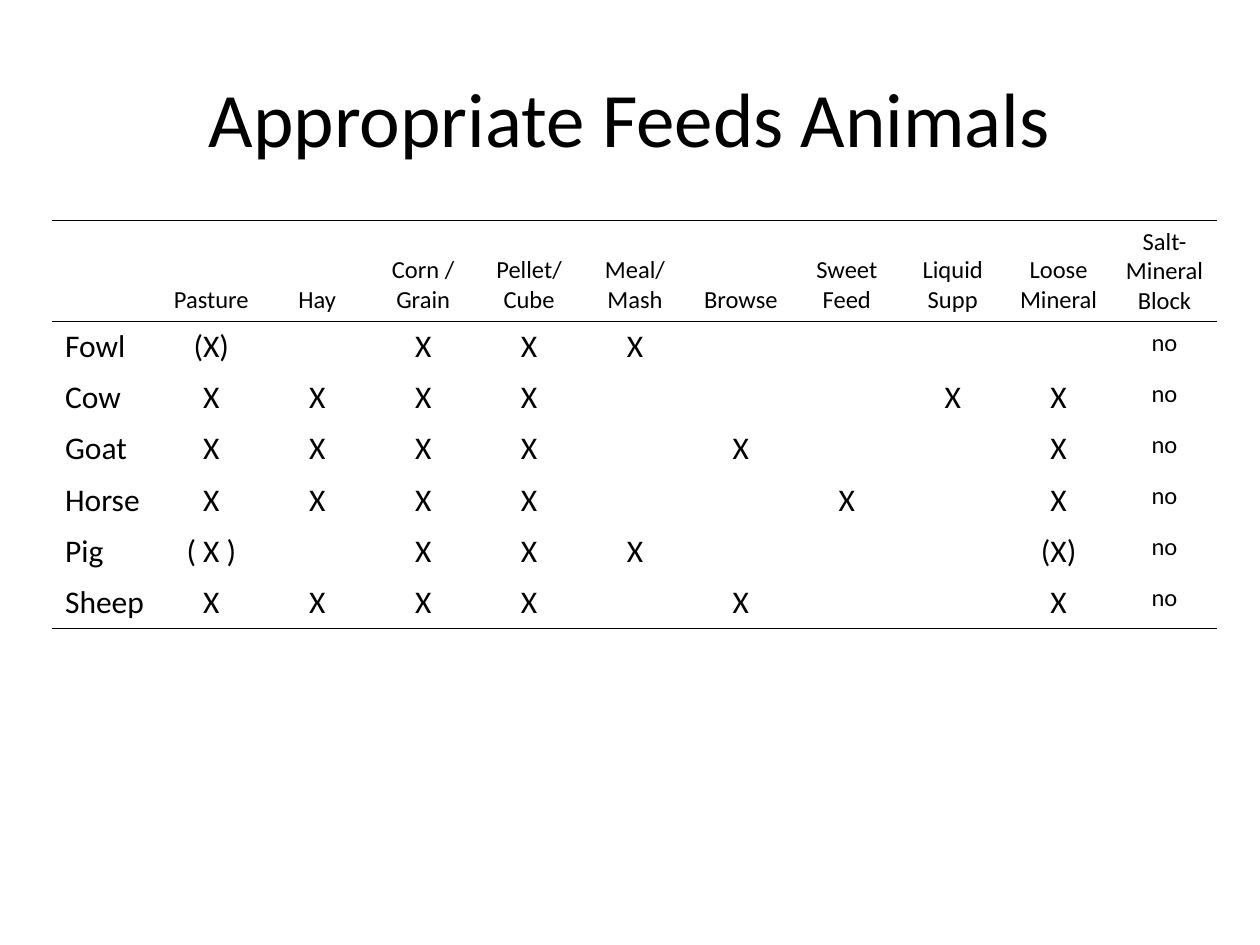
from typing import NamedTuple

from lxml.etree import SubElement as Sub
from pptx import Presentation
from pptx.dml.color import RGBColor
from pptx.enum.text import MSO_ANCHOR as Anchor, PP_ALIGN as Align
from pptx.oxml.ns import qn
from pptx.util import Pt

BLACK = RGBColor(0, 0, 0)
FONT = "Calibri"
ROW_H = 29.25


class Feed(NamedTuple):
    name: str
    marks: dict[str, str]  # animal -> mark
    size: int = 18


def marks(names: str, **extra: str) -> dict[str, str]:
    return {name: "X" for name in names.split()} | extra


ANIMALS = ["Fowl", "Cow", "Goat", "Horse", "Pig", "Sheep"]
ALL = " ".join(ANIMALS)
FEEDS = [
    Feed("Pasture", marks("Cow Goat Horse Sheep", Fowl="(X)", Pig="( X )")),
    Feed("Hay", marks("Cow Goat Horse Sheep")),
    Feed("Corn / Grain", marks(ALL)),
    Feed("Pellet/ Cube", marks(ALL)),
    Feed("Meal/Mash", marks("Fowl Pig")),
    Feed("Browse", marks("Goat Sheep")),
    Feed("Sweet Feed", marks("Horse")),
    Feed("Liquid Supp", marks("Cow")),
    Feed("Loose Mineral", marks("Cow Goat Horse Sheep", Pig="(X)")),
    Feed("Salt-Mineral Block", dict.fromkeys(ANIMALS, "no"), 14),
]


def write(frame, text: str, size: int, align: Align) -> None:
    par = frame.paragraphs[0]
    par.text = text
    par.alignment = align
    par.font.name = FONT
    par.font.size = Pt(size)
    par.font.color.rgb = BLACK


def rule(cell, lined: str) -> None:
    """Draw the lined sides in black and clear the others."""
    props = cell._tc.get_or_add_tcPr()
    for side in "LRTB":
        line = Sub(props, qn(f"a:ln{side}"), w=str(Pt(1)))
        if side in lined:
            fill = Sub(line, qn("a:solidFill"))
            Sub(fill, qn("a:srgbClr"), val=str(BLACK))
        else:
            Sub(line, qn("a:noFill"))
    cell.fill.background()


def draw_title(slide) -> None:
    box = slide.shapes.add_textbox(Pt(36), Pt(21.6), Pt(648), Pt(90))
    box.text_frame.word_wrap = True
    box.text_frame.vertical_anchor = Anchor.MIDDLE
    write(box.text_frame, "Appropriate Feeds Animals", 44, Align.CENTER)


def draw_table(slide) -> None:
    rows, cols = len(ANIMALS) + 1, len(FEEDS) + 1
    shape = slide.shapes.add_table(
        rows, cols, Pt(30), Pt(126), Pt(666), Pt(ROW_H * rows))
    table = shape.table
    table.first_row = table.horz_banding = False
    for row in table.rows:
        row.height = Pt(ROW_H)
    shape.height = Pt(232.5)  # the header grows to three lines

    # Lines above and below the header, and under the last row
    sides = ["TB", "T"] + [""] * (rows - 3) + ["B"]
    for row, lined in zip(table.rows, sides):
        for cell in row.cells:
            rule(cell, lined)

    # Animal names
    for r, name in enumerate(ANIMALS, 1):
        write(table.cell(r, 0).text_frame, name, 18, Align.LEFT)

    # One column per feed
    for c, feed in enumerate(FEEDS, 1):
        head = table.cell(0, c)
        head.vertical_anchor = Anchor.BOTTOM
        write(head.text_frame, feed.name, 14, Align.CENTER)
        for r, name in enumerate(ANIMALS, 1):
            if name in feed.marks:
                write(table.cell(r, c).text_frame, feed.marks[name],
                      feed.size, Align.CENTER)


def main() -> None:
    deck = Presentation()
    deck.slide_width, deck.slide_height = Pt(720), Pt(540)
    slide = deck.slides.add_slide(deck.slide_layouts[6])
    draw_title(slide)
    draw_table(slide)
    deck.save("out.pptx")


if __name__ == "__main__":
    main()
